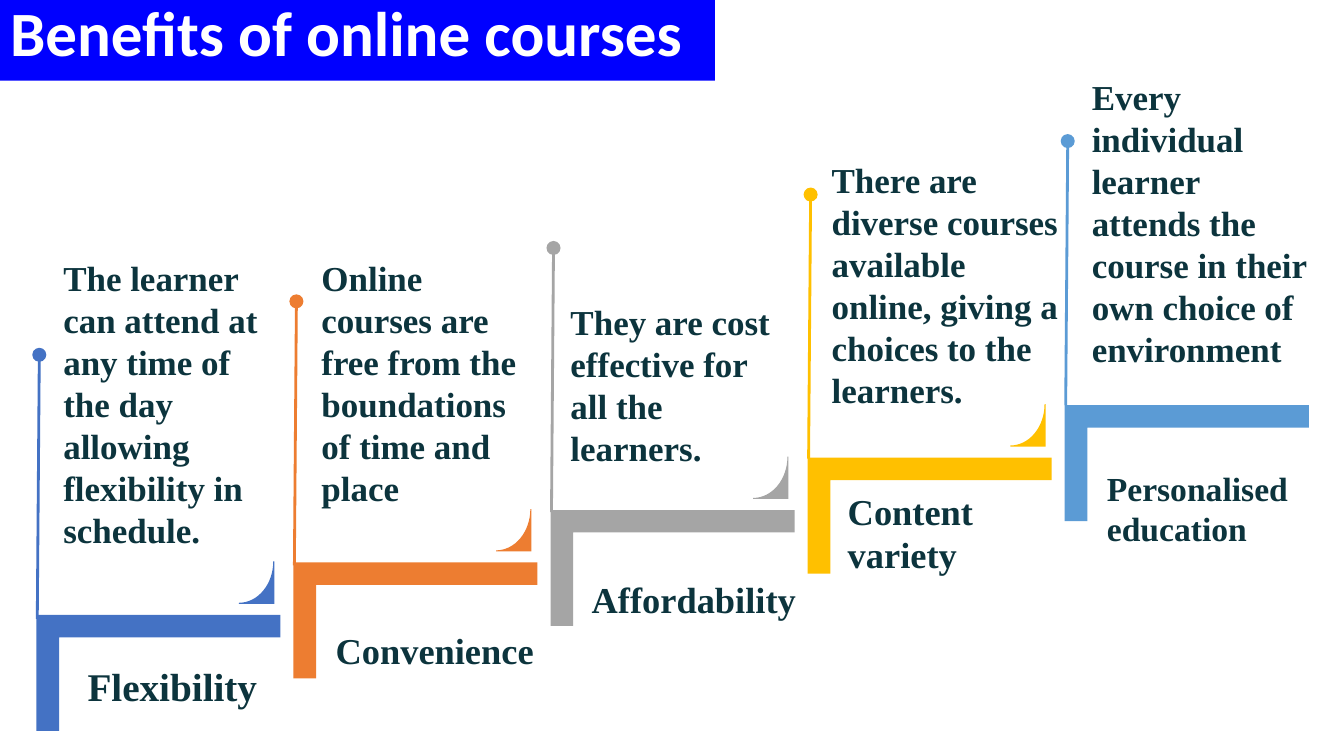
from math import cos, pi, sin

from lxml import etree
from pptx import Presentation
from pptx.dml.color import RGBColor
from pptx.enum.shapes import MSO_CONNECTOR, MSO_SHAPE
from pptx.enum.text import MSO_ANCHOR, MSO_AUTO_SIZE, PP_ALIGN
from pptx.oxml.ns import qn
from pptx.util import Inches, Pt

STRAIGHT = MSO_CONNECTOR.STRAIGHT
CORNER = MSO_SHAPE.CORNER
MIDDLE = MSO_ANCHOR.MIDDLE
NO_AUTOFIT = MSO_AUTO_SIZE.NONE
LEFT = PP_ALIGN.LEFT

COLORS = {
    "banner": "0000FF", "white": "FFFFFF", "text": "0C343D",
    "blue": "4472C4", "orange": "ED7D31", "gray": "A5A5A5",
    "yellow": "FFC000", "sky": "5B9BD5",
}

# color, description and its box, label and its box, label size
BENEFITS = [
    ("blue", "The learner can attend at any time of the day allowing flexibility in schedule.",
     (0.53, 2.5, 2.24, 3.05), "Flexibility", (0.77, 6.52, 1.9, 0.57), 28),
    ("orange", "Online courses are free from the boundations of time and place",
     (3.09, 2.5, 2.24, 2.63), "Convenience", (3.23, 6.18, 2.18, 0.5), 26),
    ("gray", "They are cost effective for all the learners.",
     (5.56, 2.93, 2.38, 1.78), "Affordability", (5.77, 5.68, 2.33, 0.5), 26),
    ("yellow", "There are diverse courses available online, giving a choices to the learners.",
     (8.15, 1.52, 2.51, 2.63), "Content\nvariety", (8.31, 4.8, 2.57, 0.5), 26),
    ("sky", "Every individual learner attends the course in their own choice of environment",
     (10.73, 0.7, 2.38, 3.05), "Personalised\neducation", (10.88, 4.59, 2.1, 0.91), 24),
]
FIRST_LEFT, FIRST_TOP = 0.36, 6.1
STEP_RIGHT, STEP_UP = 2.55, 0.52
STEM_FOOT, STEM_UP, STEM_LENGTH = 6.14, 0.53, 2.62


class StaircaseSlide:
    def __init__(self, slide):
        self.slide = slide
        self.shapes = slide.shapes

    def color(self, name):
        return RGBColor.from_string(COLORS[name])

    def paint(self, shape, color):
        shape.shadow.inherit = False
        shape.fill.solid()
        shape.fill.fore_color.rgb = self.color(color)
        shape.line.fill.background()

    def style_font(self, paragraph, name, size, color):
        font = paragraph.font
        font.name, font.size, font.bold = name, Pt(size), True
        font.color.rgb = self.color(color)

    def title(self, text, box):
        title = self.shapes.title
        title.left, title.top, title.width, title.height = map(Inches, box)
        title.fill.solid()
        title.fill.fore_color.rgb = self.color("banner")
        frame = title.text_frame
        frame.text = text
        frame.word_wrap = True
        frame.auto_size = NO_AUTOFIT
        frame.vertical_anchor = MIDDLE
        paragraph = frame.paragraphs[0]
        paragraph.alignment = LEFT
        paragraph.line_spacing = 0.7
        self.style_font(paragraph, "Calibri", 45, "white")

    def text(self, text, box, size):
        frame = self.shapes.add_textbox(*map(Inches, box)).text_frame
        frame.word_wrap = True
        frame.text = text
        for paragraph in frame.paragraphs:
            self.style_font(paragraph, "Times New Roman", size, "text")

    def step(self, left, top, color):
        """Draw an L shape turned so that its corner is at the top left."""
        shape = self.shapes.add_shape(
            CORNER, Inches(left), Inches(top), Inches(2.42), Inches(1.15))
        shape.adjustments[0], shape.adjustments[1] = 0.193, 0.196
        shape.rotation = 180
        shape.element.spPr.find(qn("a:xfrm")).set("flipH", "1")
        self.paint(shape, color)

    def fin(self, left, top, color):
        """Draw a small square with a quarter ellipse cut from its top left."""
        angles = [pi / 2 * (1 - i / 16) for i in range(17)]
        arc = [(0.34 * cos(angle), 0.41 * sin(angle)) for angle in angles]
        outline = [(0.35, 0), (0.35, 0.42), (0, 0.42)] + arc
        builder = self.shapes.build_freeform(
            Inches(left + 0.34), Inches(top), scale=1.0)
        builder.add_line_segments(
            [(Inches(left + x), Inches(top + y)) for x, y in outline])
        self.paint(builder.convert_to_shape(), color)

    def stem(self, left, foot, color):
        line = self.shapes.add_connector(
            STRAIGHT, Inches(left), Inches(foot),
            Inches(left + 0.02), Inches(foot - STEM_LENGTH))
        line.line.color.rgb = self.color(color)
        line.line.width = Pt(2)
        etree.SubElement(line.line._get_or_add_ln(), qn("a:tailEnd"),
                         type="oval", w="lg", len="lg")
        etree.SubElement(line.element.spPr, qn("a:effectLst"))


def main():
    presentation = Presentation()
    presentation.slide_width = Inches(13.33)
    presentation.slide_height = Inches(7.5)
    title_only = presentation.slide_layouts[5]
    page = StaircaseSlide(presentation.slides.add_slide(title_only))

    page.title("Benefits of online courses", (0, 0, 7.09, 0.8))
    for i, (color, description, box, label, label_box, size) in enumerate(BENEFITS):
        left, top = FIRST_LEFT + i * STEP_RIGHT, FIRST_TOP - i * STEP_UP
        page.step(left, top, color)
        if i < len(BENEFITS) - 1:
            page.fin(left + 2.01, top - 0.53, color)
        page.stem(left + 0.01, STEM_FOOT - i * STEM_UP, color)
        page.text(description, box, 25)
        page.text(label, label_box, size)

    presentation.save("out.pptx")


if __name__ == "__main__":
    main()
